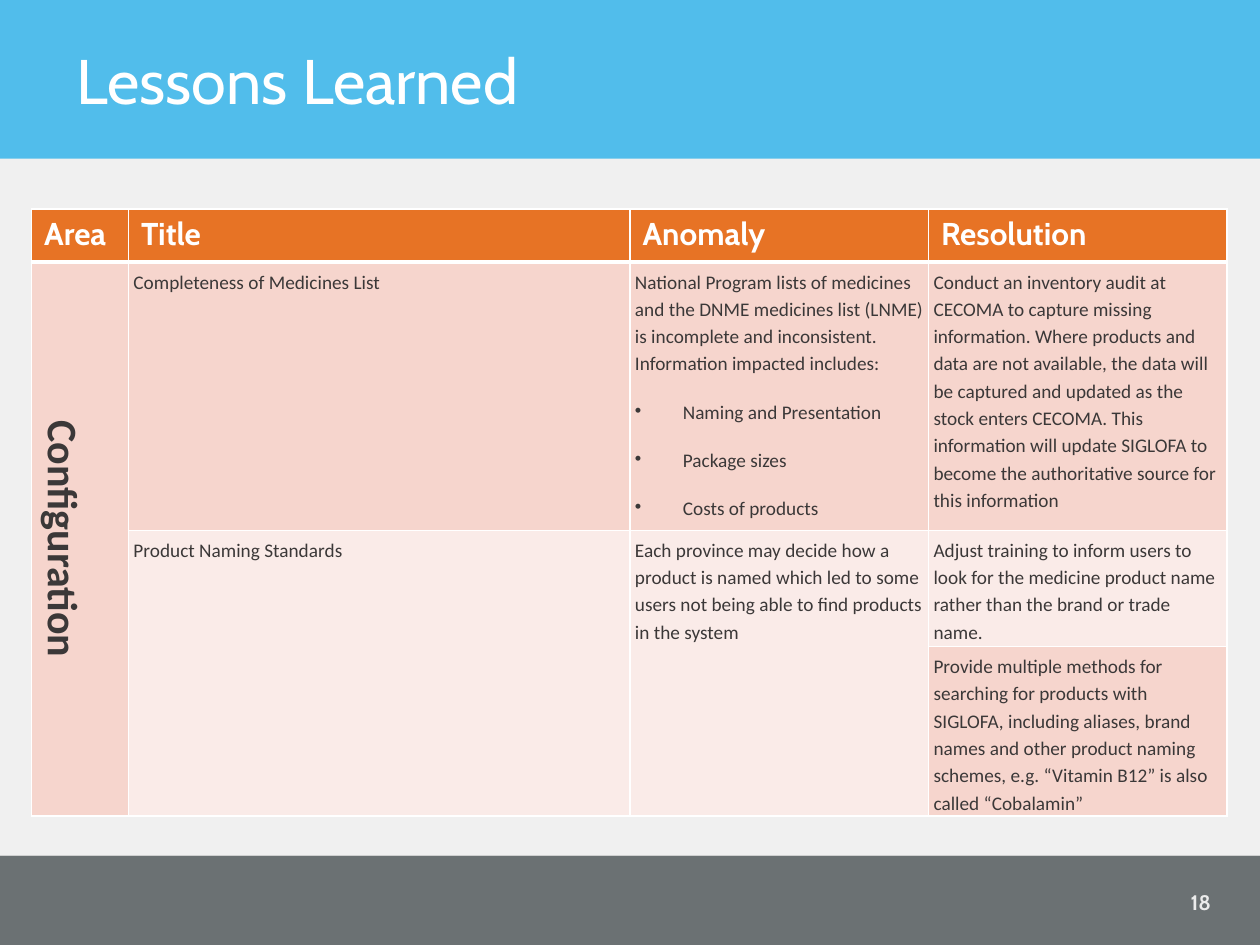
from dataclasses import dataclass

import lxml.etree
import pptx
import pptx.dml.color
import pptx.enum.shapes
import pptx.enum.text
import pptx.oxml.ns
import pptx.util

Inches = pptx.util.Inches
Pt = pptx.util.Pt
qn = pptx.oxml.ns.qn
Align = pptx.enum.text.PP_ALIGN
Anchor = pptx.enum.text.MSO_ANCHOR

COLORS = {
    "page": "EBEBEB", "body": "F0F0F0", "title_band": "51BDEB",
    "footer_band": "6B7173", "header": "E77325", "dark_row": "F6D5CD",
    "light_row": "FAEBE8", "text": "3B3838", "white": "FFFFFF",
}


@dataclass(frozen=True)
class Band:
    top: float
    height: float
    color: str


@dataclass(frozen=True)
class TextStyle:
    font: str
    size: float
    color: str
    bold: bool = False


@dataclass(frozen=True)
class Entry:
    row: int
    column: int
    text: str
    color: str
    row_span: int = 1
    bullets: tuple[str, ...] = ()


TITLE = TextStyle("Cabin", 36, "white")
HEADER = TextStyle("Cabin", 18, "white", True)
AREA = TextStyle("Calibri", 24, "text", True)
BODY = TextStyle("Calibri", 11, "text")
NUMBER = TextStyle("Cabin", 12, "page", True)

BANDS = [
    Band(0, 1.58, "title_band"),
    Band(6.79, 0.71, "footer_band"),
    Band(1.26, 5.53, "body"),
]
COLUMN_WIDTHS = [0.77, 3.98, 2.37, 2.37]
ROW_HEIGHTS = [0.42, 2.13, 0.73, 1.17]
HEADINGS = ["Area", "Title", "Anomaly", "Resolution"]
AREA_ENTRY = Entry(1, 0, "Configuration", "dark_row", 3)
ENTRIES = [
    Entry(1, 1, "Completeness of Medicines List", "dark_row"),
    Entry(1, 2, "National Program lists of medicines and the DNME medicines list "
          "(LNME) is incomplete and inconsistent. Information impacted includes:",
          "dark_row",
          bullets=("Naming and Presentation", "Package sizes", "Costs of products")),
    Entry(1, 3, "Conduct an inventory audit at CECOMA to capture missing information. "
          "Where products and data are not available, the data will be captured and "
          "updated as the stock enters CECOMA. This information will update SIGLOFA "
          "to become the authoritative source for this information", "dark_row"),
    Entry(2, 1, "Product Naming Standards", "light_row", 2),
    Entry(2, 2, "Each province may decide how a product is named which led to some "
          "users not being able to find products in the system", "light_row", 2),
    Entry(2, 3, "Adjust training to inform users to look for the medicine product "
          "name rather than the brand or trade name.", "light_row"),
    Entry(3, 3, "Provide multiple methods for searching for products with SIGLOFA, "
          "including aliases, brand names and other product naming schemes, e.g. "
          "“Vitamin B12” is also called “Cobalamin”", "dark_row"),
]


def rgb(name: str) -> pptx.dml.color.RGBColor:
    return pptx.dml.color.RGBColor.from_string(COLORS[name])


def add_span(para, text: str, style: TextStyle) -> None:
    span = para.add_run()
    span.text = text
    span.font.name = style.font
    span.font.size = Pt(style.size)
    span.font.bold = style.bold
    span.font.color.rgb = rgb(style.color)


def draw_band(page, band: Band) -> None:
    shape = page.shapes.add_shape(
        pptx.enum.shapes.MSO_SHAPE.RECTANGLE,
        0, Inches(band.top), Inches(10), Inches(band.height))
    shape.shadow.inherit = False
    shape.fill.solid()
    shape.fill.fore_color.rgb = rgb(band.color)
    shape.line.fill.background()


def draw_text(page, place: tuple[float, ...], text: str, style: TextStyle, align):
    box = page.shapes.add_textbox(*map(Inches, place))
    box.text_frame.word_wrap = True
    box.text_frame.vertical_anchor = Anchor.MIDDLE
    para = box.text_frame.paragraphs[0]
    para.alignment = align
    add_span(para, text, style)
    return para


def paint_cell(cell, color: str, bottom: float = 1) -> None:
    properties = cell._tc.get_or_add_tcPr()
    for side, width in {"lnL": 1, "lnR": 1, "lnT": 1, "lnB": bottom}.items():
        line = lxml.etree.SubElement(properties, qn(f"a:{side}"), w=str(Pt(width)))
        fill = lxml.etree.SubElement(line, qn("a:solidFill"))
        lxml.etree.SubElement(fill, qn("a:srgbClr"), val=COLORS["white"])
    cell.fill.solid()
    cell.fill.fore_color.rgb = rgb(color)


def add_bullet(para) -> None:
    properties = para._p.get_or_add_pPr()
    properties.set("marL", str(Inches(0.38)))
    properties.set("indent", str(-Inches(0.38)))
    lxml.etree.SubElement(properties, qn("a:buChar"), char="•")


def fill_entry(table, entry: Entry, style: TextStyle):
    cell = table.cell(entry.row, entry.column)
    last_row = entry.row + entry.row_span - 1
    for row in range(entry.row, last_row + 1):
        paint_cell(table.cell(row, entry.column), entry.color)
    if entry.row_span > 1:
        cell.merge(table.cell(last_row, entry.column))
    cell.margin_left = cell.margin_right = Inches(0.04)
    cell.margin_top = cell.margin_bottom = Inches(0.04)
    for index, text in enumerate((entry.text, *entry.bullets)):
        frame = cell.text_frame
        para = frame.add_paragraph() if index else frame.paragraphs[0]
        if index:
            add_bullet(para)
            para.space_before = Pt(6)
        para.space_after = Pt(6)
        para.line_spacing = 1.15
        add_span(para, text, style)
    return cell


def draw_table(page) -> None:
    table = page.shapes.add_table(
        len(ROW_HEIGHTS), len(COLUMN_WIDTHS), Inches(0.25), Inches(1.66),
        Inches(sum(COLUMN_WIDTHS)), Inches(sum(ROW_HEIGHTS))).table
    table.horz_banding = False
    for column, width in zip(table.columns, COLUMN_WIDTHS):
        column.width = Inches(width)
    for row, height in zip(table.rows, ROW_HEIGHTS):
        row.height = Inches(height)
    for index, heading in enumerate(HEADINGS):
        cell = table.cell(0, index)
        paint_cell(cell, "header", 3)
        add_span(cell.text_frame.paragraphs[0], heading, HEADER)
    area = fill_entry(table, AREA_ENTRY, AREA)
    area.vertical_anchor = Anchor.MIDDLE
    area.text_frame.paragraphs[0].alignment = Align.CENTER
    area._tc.get_or_add_tcPr().set("vert", "vert")
    for entry in ENTRIES:
        fill_entry(table, entry, BODY)


def main() -> None:
    deck = pptx.Presentation()
    deck.slide_width = Inches(10)
    deck.slide_height = Inches(7.5)
    page = deck.slides.add_slide(deck.slide_layouts[6])
    page.background.fill.solid()
    page.background.fill.fore_color.rgb = rgb("page")
    for band in BANDS:
        draw_band(page, band)
    title = draw_text(page, (0.51, 0.09, 8.59, 1.17), "Lessons Learned", TITLE, Align.LEFT)
    title.line_spacing = Pt(37.2)
    draw_table(page)
    draw_text(page, (8.92, 6.96, 0.79, 0.4), "18", NUMBER, Align.RIGHT)
    deck.save("out.pptx")


if __name__ == "__main__":
    main()
